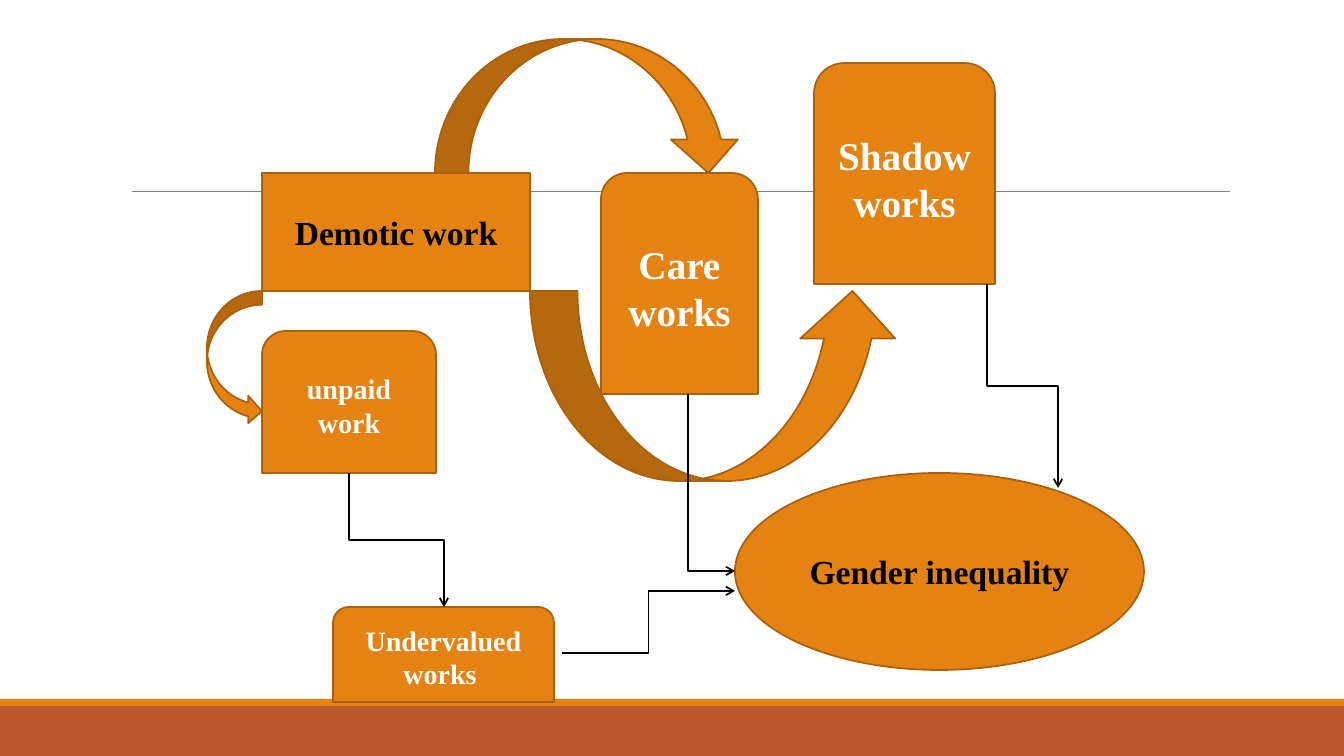
"""Build a slide showing how unpaid, care and shadow work lead to gender inequality."""
from lxml import etree
from pptx import Presentation
from pptx.dml.color import RGBColor
from pptx.enum.shapes import MSO_CONNECTOR, MSO_SHAPE
from pptx.enum.text import MSO_ANCHOR, PP_ALIGN
from pptx.oxml.ns import qn
from pptx.util import Pt

PX = 914400 / 100.8
THEME = {
    "font": "Times New Roman",
    "orange": RGBColor.from_string("E48312"),
    "rust": RGBColor.from_string("BD582C"),
    "edge": RGBColor.from_string("A9610D"),
    "gray": RGBColor.from_string("808080"),
    "black": RGBColor.from_string("000000"),
    "white": RGBColor.from_string("FFFFFF"),
    "large": Pt(28), "medium": Pt(24), "small": Pt(20),
    "outline": Pt(1.25), "hairline": Pt(0.5),
}

prs = Presentation()
prs.slide_width, prs.slide_height = round(1344 * PX), round(756 * PX)
s = prs.slides.add_slide(prs.slide_layouts[6])


def add_block(kind, box, fill="orange", edge="edge"):
    sp = s.shapes.add_shape(kind, *(round(v * PX) for v in box))
    sp.shadow.inherit = False
    sp.fill.solid()
    sp.fill.fore_color.rgb = THEME[fill]
    if edge:
        sp.line.color.rgb = THEME[edge]
        sp.line.width = THEME["outline"]
    else:
        sp.line.fill.background()
    return sp


def add_line(kind, ends, color, width):
    cx = s.shapes.add_connector(kind, *(round(v * PX) for v in ends))
    cx.line.color.rgb = THEME[color]
    cx.line.width = THEME[width]
    etree.SubElement(cx._element.spPr, qn("a:effectLst"))
    return cx


add_block(MSO_SHAPE.RECTANGLE, (0, 706, 1344, 50), "rust", None)
add_block(MSO_SHAPE.RECTANGLE, (0, 699, 1344, 7), "orange", None)
add_line(MSO_CONNECTOR.STRAIGHT, (132, 191, 1230, 191), "gray", "hairline")

RECT, TAB = MSO_SHAPE.RECTANGLE, MSO_SHAPE.ROUND_2_SAME_RECTANGLE
blocks = [
    (RECT, (262, 173, 268, 118), "Demotic work", "medium", "black"),
    (MSO_SHAPE.CURVED_DOWN_ARROW, (435, 39, 307, 134), "", "", ""),
    (MSO_SHAPE.CURVED_UP_ARROW, (530, 291, 370, 190), "", "", ""),
    (TAB, (601, 173, 157, 221), "Care works", "large", "white"),
    (TAB, (814, 63, 181, 221), "Shadow works", "large", "white"),
    (MSO_SHAPE.OVAL, (735, 473, 409, 197), "Gender inequality", "medium", "black"),
    (MSO_SHAPE.CURVED_RIGHT_ARROW, (207, 291, 55, 134), "", "", ""),
    (TAB, (262, 331, 174, 142), "unpaid work", "small", "white"),
    (TAB, (333, 607, 221, 95), "Undervalued works ", "small", "white"),
]
for kind, box, text, size, color in blocks:
    sp = add_block(kind, box)
    if not text:
        continue
    tf = sp.text_frame
    tf.text = text
    tf.word_wrap = True
    tf.vertical_anchor = MSO_ANCHOR.MIDDLE
    p = tf.paragraphs[0]
    p.alignment = PP_ALIGN.CENTER
    r = p.runs[0]
    r.font.name, r.font.size, r.font.bold = THEME["font"], THEME[size], True
    r.font.color.rgb = THEME[color]

links = [
    ((987, 284, 1058, 488), "bentConnector3", True),
    ((688, 394, 735, 571), "bentConnector2", True),
    ((349, 473, 444, 607), "bentConnector3", True),
    ((562, 653, 735, 591), "bentConnector3", False),
]
for (x1, y1, x2, y2), bend, downward in links:
    ends = (x1, y1, x2, y2)
    if downward:
        mx, my, dx, dy = (x1 + x2) / 2, (y1 + y2) / 2, (x2 - x1) / 2, (y2 - y1) / 2
        ends = (mx + dy, my - dx, mx - dy, my + dx)
    cx = add_line(MSO_CONNECTOR.ELBOW, ends, "black", "outline")
    spPr = cx._element.spPr
    spPr.find(qn("a:prstGeom")).set("prst", bend)
    if downward:
        spPr.find(qn("a:xfrm")).set("rot", "16200000")
    etree.SubElement(spPr.find(qn("a:ln")), qn("a:tailEnd"), type="arrow")

prs.save("out.pptx")
